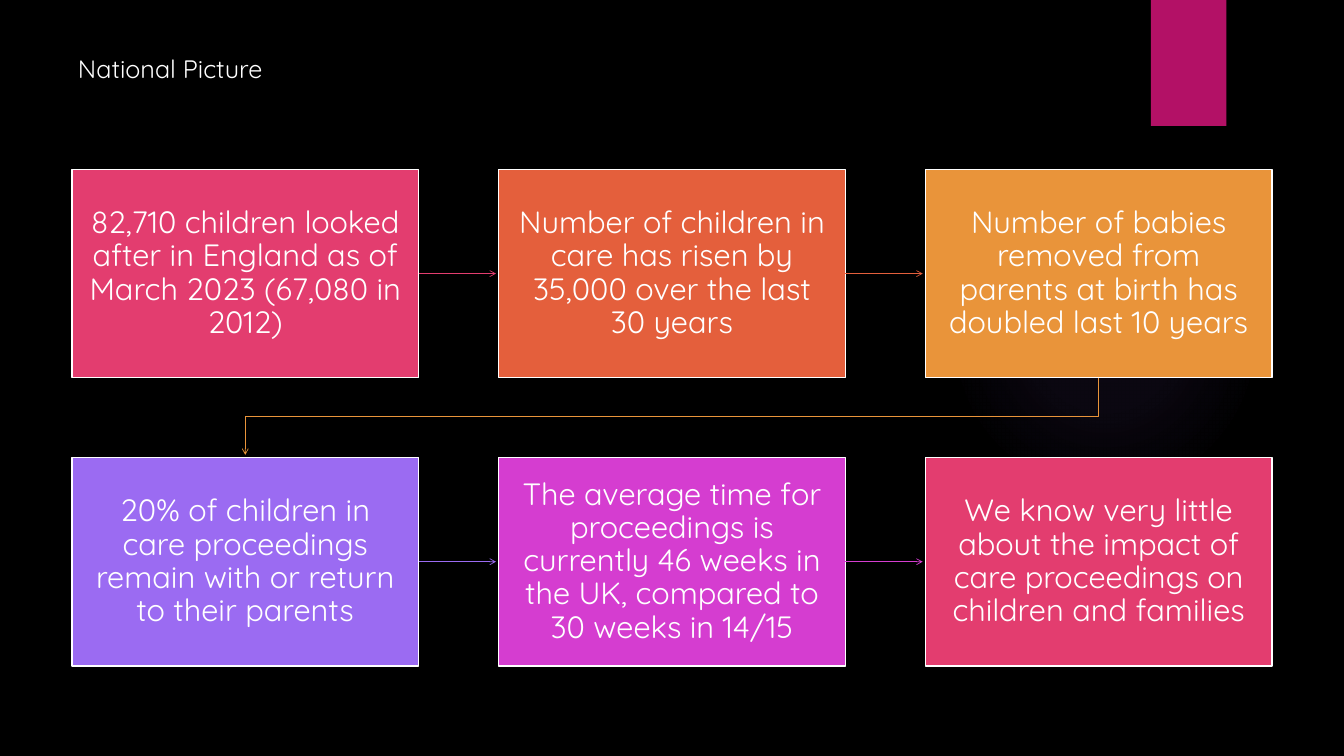
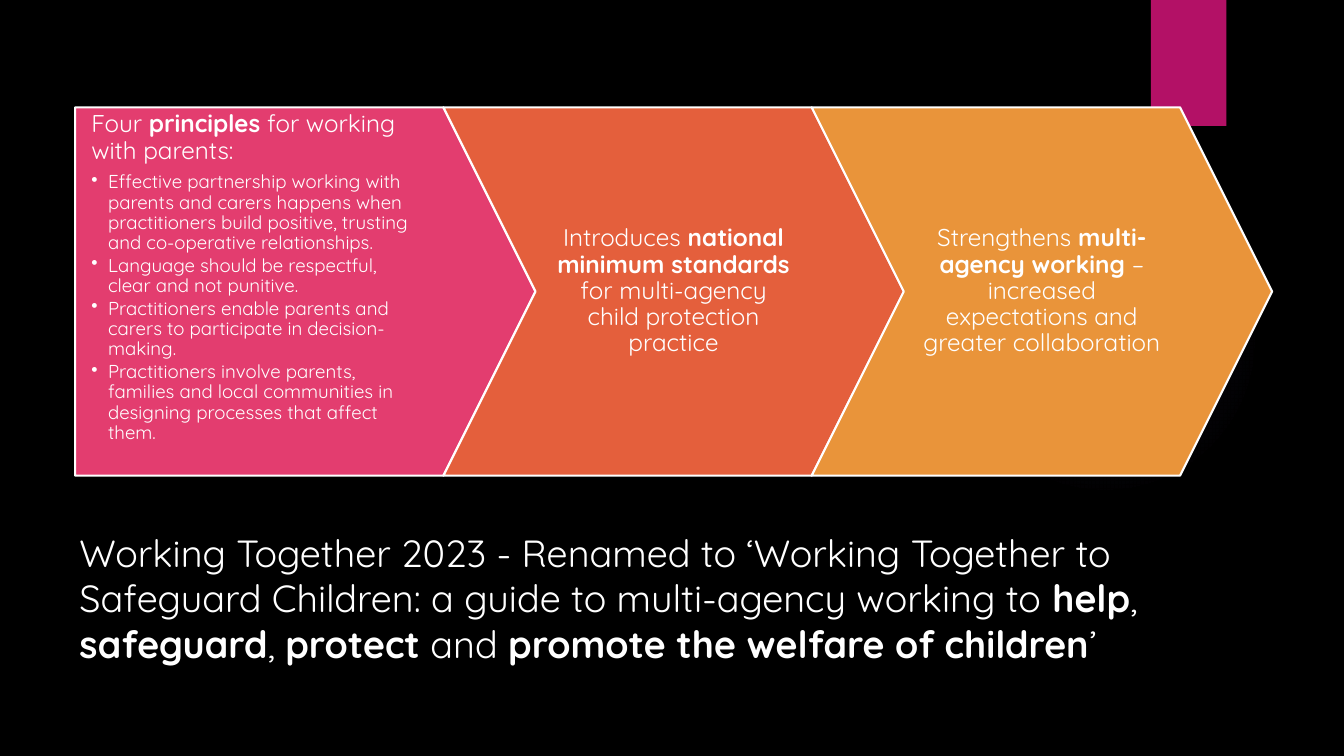
"""Build two slides on care proceedings and the 2023 safeguarding guidance."""
from lxml import etree
from pptx import Presentation
from pptx.dml.color import RGBColor
from pptx.enum.shapes import MSO_CONNECTOR, MSO_SHAPE
from pptx.enum.text import MSO_ANCHOR, PP_ALIGN
from pptx.oxml import parse_xml
from pptx.oxml.ns import nsdecls, qn
from pptx.util import Pt

RECTANGLE, ELLIPSE = MSO_SHAPE.RECTANGLE, MSO_SHAPE.OVAL
PENTAGON, CHEVRON = MSO_SHAPE.PENTAGON, MSO_SHAPE.CHEVRON
STRAIGHT = MSO_CONNECTOR.STRAIGHT
TOP, MIDDLE = MSO_ANCHOR.TOP, MSO_ANCHOR.MIDDLE
LEFT, CENTER = PP_ALIGN.LEFT, PP_ALIGN.CENTER

FONT = "Quicksand"
COLORS = {
    "background": "000000",
    "text": "FFFFFF",
    "band": "B31166",
    "pink": "E33D6F",
    "orange": "E45F3C",
    "amber": "E9943A",
    "violet": "9B6BF2",
    "magenta": "D53DD0",
}
GLOW_STOPS = ((0, 7), (36, 6), (69, 0))

FACTS = [
    ("pink", "82,710 children looked after in England as of March 2023 (67,080 in 2012)"),
    ("orange", "Number of children in care has risen by 35,000 over the last 30 years"),
    ("amber", "Number of babies removed from parents at birth has doubled last 10 years"),
    ("violet", "20% of children in care proceedings remain with or return to their parents"),
    ("magenta", "The average time for proceedings is currently 46 weeks in the UK, "
                "compared to 30 weeks in 14/15"),
    ("pink", "We know very little about the impact of care proceedings on children and families"),
]
PRINCIPLES = [
    "Effective partnership working with parents and carers happens when practitioners "
    "build positive, trusting and co-operative relationships.",
    "Language should be respectful, clear and not punitive.",
    "Practitioners enable parents and carers to participate in decision-making.",
    "Practitioners involve parents, families and local communities in designing "
    "processes that affect them.",
]
CHANGES = [
    ("pink", "Four *principles* for working with parents:", PRINCIPLES),
    ("orange", "Introduces *national minimum standards* for multi-agency "
               "child protection practice", []),
    ("amber", "Strengthens *multi-agency working* – increased expectations "
              "and greater collaboration", []),
]
GUIDANCE_TITLE = (
    "Working Together 2023 - Renamed to ‘Working Together to Safeguard Children: "
    "a guide to multi-agency working to *help*, *safeguard*, *protect* and "
    "*promote the welfare of children*’"
)


def color(name):
    """Return the named colour."""
    return RGBColor.from_string(COLORS[name])


def write(para, marked, size, align=LEFT, spacing=1.0, after=0):
    """Fill a paragraph, making the parts between asterisks bold."""
    para.alignment = align
    para.line_spacing = spacing
    para.space_after = Pt(after)
    for index, words in enumerate(marked.split("*")):
        span = para.add_run()
        span.text = words
        span.font.name = FONT
        span.font.size = Pt(size)
        span.font.bold = index % 2 == 1
        span.font.color.rgb = color("text")


def set_frame(frame, anchor, margins):
    """Wrap a text frame and set its anchor and margins."""
    frame.word_wrap = True
    frame.vertical_anchor = anchor
    (frame.margin_left, frame.margin_top,
     frame.margin_right, frame.margin_bottom) = map(Pt, margins)


def add_block(page, kind, box, fill, line_width=0):
    """Add a filled shape, with a white outline if a width is given."""
    block = page.shapes.add_shape(kind, *map(Pt, box))
    block.shadow.inherit = False
    block.fill.solid()
    block.fill.fore_color.rgb = color(fill)
    if line_width:
        block.line.color.rgb = color("text")
        block.line.width = Pt(line_width)
    else:
        block.line.fill.background()
    return block


def add_glow(page, box):
    """Add the faint round glow of the background."""
    glow = add_block(page, ELLIPSE, box, "violet")
    stops = "".join(
        f'<a:gs pos="{place * 1000}"><a:srgbClr val="{COLORS["violet"]}">'
        f'<a:alpha val="{alpha * 1000}"/></a:srgbClr></a:gs>'
        for place, alpha in GLOW_STOPS)
    gradient = parse_xml(
        f'<a:gradFill {nsdecls("a")}><a:gsLst>{stops}</a:gsLst><a:path path="circle">'
        '<a:fillToRect l="50000" t="50000" r="50000" b="50000"/></a:path></a:gradFill>')
    properties = glow.element.spPr
    properties.replace(properties.find(qn("a:solidFill")), gradient)


def add_page(deck):
    """Add a black page with the glow and the band."""
    page = deck.slides.add_slide(deck.slide_layouts[6])
    page.background.fill.solid()
    page.background.fill.fore_color.rgb = color("background")
    add_glow(page, (1017, 198, 333, 333))
    add_block(page, RECTANGLE, (1233, 0, 81, 135), "band")
    return page


def add_title(page, box, marked, size):
    """Add the title text."""
    frame = page.shapes.add_textbox(*map(Pt, box)).text_frame
    set_frame(frame, TOP, (7.2, 3.6, 7.2, 3.6))
    write(frame.paragraphs[0], marked, size)


def style_arrow(arrow, name):
    """Colour a line and put an open arrowhead at its end."""
    arrow.line.color.rgb = color(name)
    arrow.line.width = Pt(0.75)
    properties = arrow.element.spPr
    etree.SubElement(properties.find(qn("a:ln")), qn("a:tailEnd"), type="arrow")
    if properties.find(qn("a:effectLst")) is None:
        etree.SubElement(properties, qn("a:effectLst"))


def add_step_arrow(page, start, end, name):
    """Join two neighbouring boxes with a straight arrow."""
    arrow = page.shapes.add_connector(STRAIGHT, *map(Pt, start + end))
    style_arrow(arrow, name)


def add_return_arrow(page, start, end, name):
    """Lead from the last box of a row to the first box of the next."""
    middle = (start[1] + end[1]) / 2
    corners = [(start[0], middle), (end[0], middle), end]
    builder = page.shapes.build_freeform(*map(Pt, start))
    builder.add_line_segments([tuple(map(Pt, corner)) for corner in corners], close=False)
    arrow = builder.convert_to_shape()
    arrow.shadow.inherit = False
    arrow.fill.background()
    style_arrow(arrow, name)


def add_fact_grid(page, box, columns=3, gap_x=85.6, gap_y=85.4, clearance=2.8):
    """Place the facts in rows and join them in reading order."""
    left, top, width, height = box
    rows = len(FACTS) // columns
    fact_width = (width - gap_x * (columns - 1)) / columns
    fact_height = (height - gap_y * (rows - 1)) / rows
    for index, (name, words) in enumerate(FACTS):
        row, column = divmod(index, columns)
        x = left + column * (fact_width + gap_x)
        y = top + row * (fact_height + gap_y)
        fact = add_block(page, RECTANGLE, (x, y, fact_width, fact_height), name, 1.5)
        set_frame(fact.text_frame, MIDDLE, (18, 19, 18, 19))
        write(fact.text_frame.paragraphs[0], words, 33, CENTER, 0.9)
        if column < columns - 1:
            right, middle = x + fact_width, y + fact_height / 2
            add_step_arrow(page, (right, middle), (right + gap_x - clearance, middle), name)
        elif row < rows - 1:
            bottom = y + fact_height
            add_return_arrow(page, (x + fact_width / 2, bottom),
                             (left + fact_width / 2, bottom + gap_y - clearance), name)


def add_bullet(frame, words):
    """Add one bulleted paragraph."""
    para = frame.add_paragraph()
    para.level = 1
    properties = para._p.get_or_add_pPr()
    properties.set("marL", str(Pt(18)))
    properties.set("indent", str(-Pt(18)))
    etree.SubElement(properties, qn("a:buChar"), char="•")
    write(para, words, 20, LEFT, 0.9, 3)


def add_change_chain(page, box):
    """Place the changes as a chain of interlocking arrows."""
    left, top, width, height = box
    tip = height / 4
    step = (width - tip) / len(CHANGES)
    for index, (name, heading, bullets) in enumerate(CHANGES):
        kind = CHEVRON if index else PENTAGON
        place = (left + index * step, top, step + tip, height)
        change = add_block(page, kind, place, name, 2.25)
        change.adjustments[0] = 0.25
        frame = change.text_frame
        set_frame(frame, TOP if bullets else MIDDLE, (17.3, 5, 70 if bullets else 17.3, 5))
        write(frame.paragraphs[0], heading, 26, LEFT if bullets else CENTER, 0.9, 9)
        for words in bullets:
            add_bullet(frame, words)


def build_picture_page(deck):
    """Build the page of national facts."""
    page = add_page(deck)
    add_title(page, (76.5, 53.5, 1111, 165.5), "National Picture", 27)
    add_fact_grid(page, (77, 181.5, 1286, 532))


def build_guidance_page(deck):
    """Build the page on the renamed guidance."""
    page = add_page(deck)
    add_title(page, (78, 564, 1272, 196), GUIDANCE_TITLE, 40.5)
    add_change_chain(page, (80.5, 115, 1282.5, 394.6))


def main():
    """Build and save the deck."""
    deck = Presentation()
    deck.slide_width, deck.slide_height = Pt(1440), Pt(810)
    build_picture_page(deck)
    build_guidance_page(deck)
    deck.save("out.pptx")


if __name__ == "__main__":
    main()
